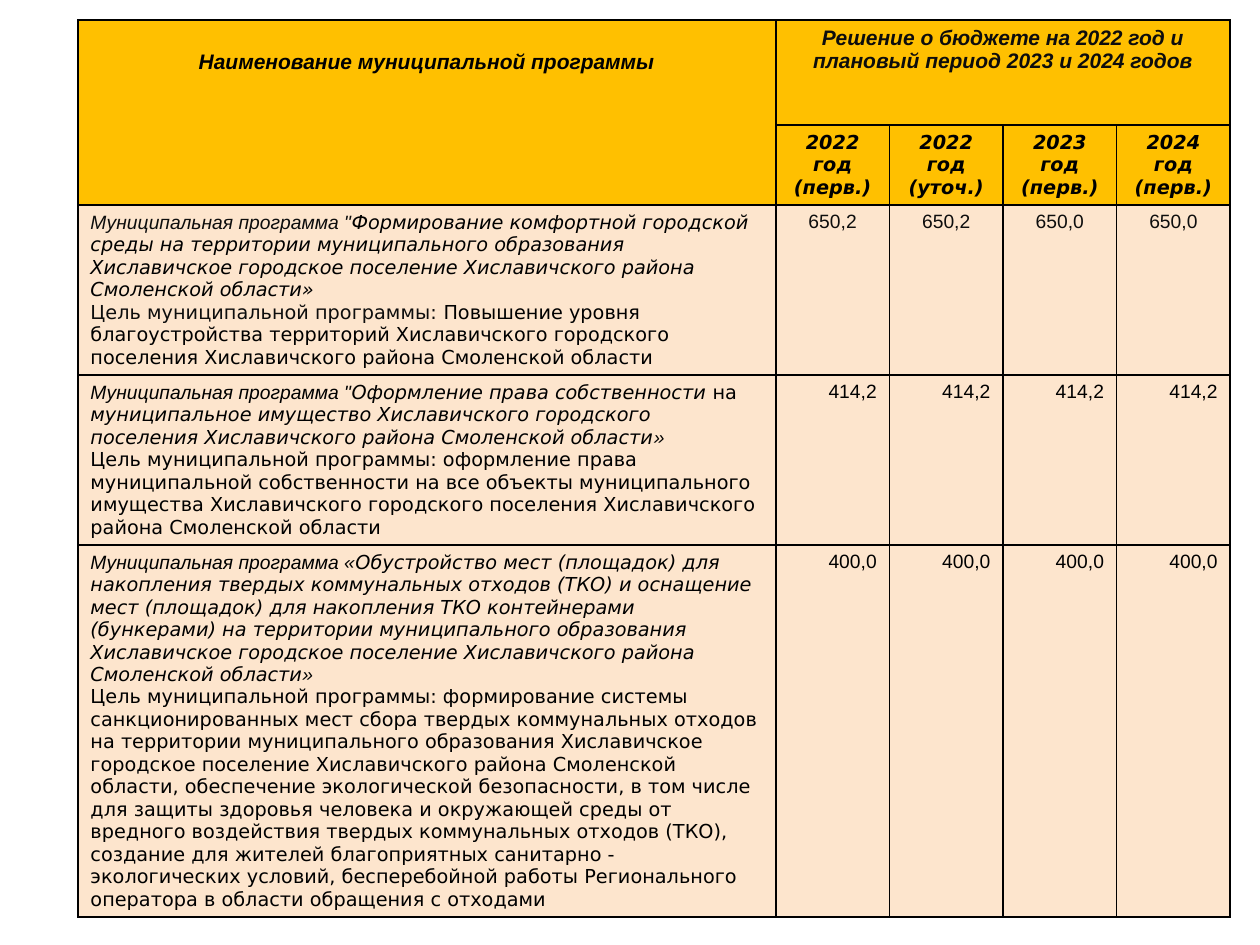
import pptx
import pptx.dml.color
import pptx.enum.text
import pptx.oxml
import pptx.oxml.ns
import pptx.util
from lxml import etree

Cm = pptx.util.Cm
Align = pptx.enum.text.PP_ALIGN

# Content
GOLD, CREAM, BLACK, SOFT = "FFC000", "FDE5CD", "000000", "0D0D0D"
NAME_HEADER = "Наименование муниципальной программы"
BUDGET_HEADER = "Решение о бюджете на 2022 год и плановый период 2023 и 2024 годов"
YEARS = ["2022 год (перв.)", "2022 год (уточ.)", "2023 год (перв.)", "2024 год (перв.)"]

# Text styles: font, size, colour, bold, italic
STYLES = {
    "name header": ("Arial", 12, BLACK, True, True),
    "budget header": ("Arial", 12, SOFT, True, True),
    "year": ("DejaVu Sans", 11, BLACK, True, True),
    "lead soft": ("Arial", 11, SOFT, False, True),
    "lead": ("Arial", 11, BLACK, False, True),
    "title": ("DejaVu Sans", 11, BLACK, False, True),
    "goal soft": ("DejaVu Sans", 11, SOFT, False, False),
    "goal": ("DejaVu Sans", 11, BLACK, False, False),
    "amount soft": ("Arial", 11, SOFT, False, False),
    "amount": ("Arial", 11, BLACK, False, False),
}

# Each program: paragraphs of (text, style), amounts, amount style, alignment
PROGRAMS = [
    ([
        [("Муниципальная программа \"", "lead soft"),
         ("Формирование комфортной городской среды на территории муниципального "
          "образования Хиславичское городское поселение Хиславичского района "
          "Смоленской области»", "title")],
        [("Цель муниципальной программы: ", "goal soft"),
         ("Повышение уровня благоустройства территорий Хиславичского городского "
          "поселения Хиславичского района Смоленской области", "goal")],
    ], ["650,2", "650,2", "650,0", "650,0"], "amount soft", Align.CENTER),
    ([
        [("Муниципальная программа \"", "lead"),
         ("Оформление права собственности", "title"),
         (" на ", "goal"),
         ("муниципальное имущество Хиславичского городского поселения "
          "Хиславичского района Смоленской области", "title"),
         ("»", "lead")],
        [("Цель муниципальной программы: оформление права муниципальной "
          "собственности на все объекты муниципального имущества Хиславичского "
          "городского поселения Хиславичского района Смоленской области", "goal")],
    ], ["414,2"] * 4, "amount", Align.RIGHT),
    ([
        [("Муниципальная программа «", "lead"),
         ("Обустройство мест (площадок) для накопления твердых коммунальных "
          "отходов (ТКО) и оснащение мест (площадок) для накопления ТКО "
          "контейнерами (бункерами) на территории муниципального образования "
          "Хиславичское городское поселение Хиславичского района", "title")],
        [("Смоленской области", "title"), ("»", "lead")],
        [("Цель муниципальной программы: формирование системы санкционированных "
          "мест сбора твердых коммунальных отходов на территории муниципального "
          "образования Хиславичское городское поселение Хиславичского района "
          "Смоленской области, обеспечение экологической безопасности, в том "
          "числе для защиты здоровья человека и окружающей среды от вредного "
          "воздействия твердых коммунальных отходов (ТКО), создание для жителей "
          "благоприятных санитарно - экологических условий, бесперебойной работы "
          "Регионального оператора в области обращения с отходами", "goal")],
    ], ["400,0"] * 4, "amount", Align.RIGHT),
]

# Geometry in centimetres
LEFT, TOP = 1.57, 0.4
COLUMN_WIDTHS = [14.07] + [2.29] * len(YEARS)
ROW_HEIGHTS = [2.12, 1.61, 3.42, 3.42, 7.48]
HEADER_ROWS = 2


def color(value):
    return pptx.dml.color.RGBColor.from_string(value)


def write(cell, paragraphs, align):
    """Fill a cell with paragraphs made of (text, style) spans."""
    frame = cell.text_frame
    for number, spans in enumerate(paragraphs):
        paragraph = frame.add_paragraph() if number else frame.paragraphs[0]
        paragraph.alignment = align
        for text, style in spans:
            span = paragraph.add_run()
            span.text = text
            font = span.font
            font.name, size, tint, font.bold, font.italic = STYLES[style]
            font.size = pptx.util.Pt(size)
            font.color.rgb = color(tint)


def paint(cell, fill):
    """Give a cell thin black borders and a solid fill."""
    properties = cell._tc.get_or_add_tcPr()
    for side in ("a:lnL", "a:lnR", "a:lnT", "a:lnB"):
        line = etree.SubElement(properties, pptx.oxml.ns.qn(side), w=str(pptx.util.Pt(1)))
        solid = etree.SubElement(line, pptx.oxml.ns.qn("a:solidFill"))
        etree.SubElement(solid, pptx.oxml.ns.qn("a:srgbClr"), val=BLACK)
    cell.fill.solid()
    cell.fill.fore_color.rgb = color(fill)


def main():
    deck = pptx.Presentation()
    deck.slide_width, deck.slide_height = Cm(25.4), Cm(19.05)
    page = deck.slides.add_slide(deck.slide_layouts[6])

    # Table grid
    table = page.shapes.add_table(
        len(ROW_HEIGHTS), len(COLUMN_WIDTHS), Cm(LEFT), Cm(TOP),
        Cm(sum(COLUMN_WIDTHS)), Cm(sum(ROW_HEIGHTS))).table
    table.first_row = table.horz_banding = False
    for column, width in zip(table.columns, COLUMN_WIDTHS):
        column.width = Cm(width)
    for index, (row, height) in enumerate(zip(table.rows, ROW_HEIGHTS)):
        row.height = Cm(height)
        for cell in row.cells:
            paint(cell, GOLD if index < HEADER_ROWS else CREAM)

    # Header
    name_cell, budget_cell = table.cell(0, 0), table.cell(0, 1)
    name_cell.merge(table.cell(HEADER_ROWS - 1, 0))
    budget_cell.merge(table.cell(0, len(YEARS)))
    name_cell.margin_top = Cm(0.61)
    write(name_cell, [[(NAME_HEADER, "name header")]], Align.CENTER)
    write(budget_cell, [[(BUDGET_HEADER, "budget header")]], Align.CENTER)
    for column, year in enumerate(YEARS, 1):
        write(table.cell(1, column), [[(year, "year")]], Align.CENTER)

    # Programs and their amounts
    for row, (paragraphs, amounts, style, align) in enumerate(PROGRAMS, HEADER_ROWS):
        write(table.cell(row, 0), paragraphs, Align.LEFT)
        for column, amount in enumerate(amounts, 1):
            write(table.cell(row, column), [[(amount, style)]], align)

    deck.save("out.pptx")


if __name__ == "__main__":
    main()
